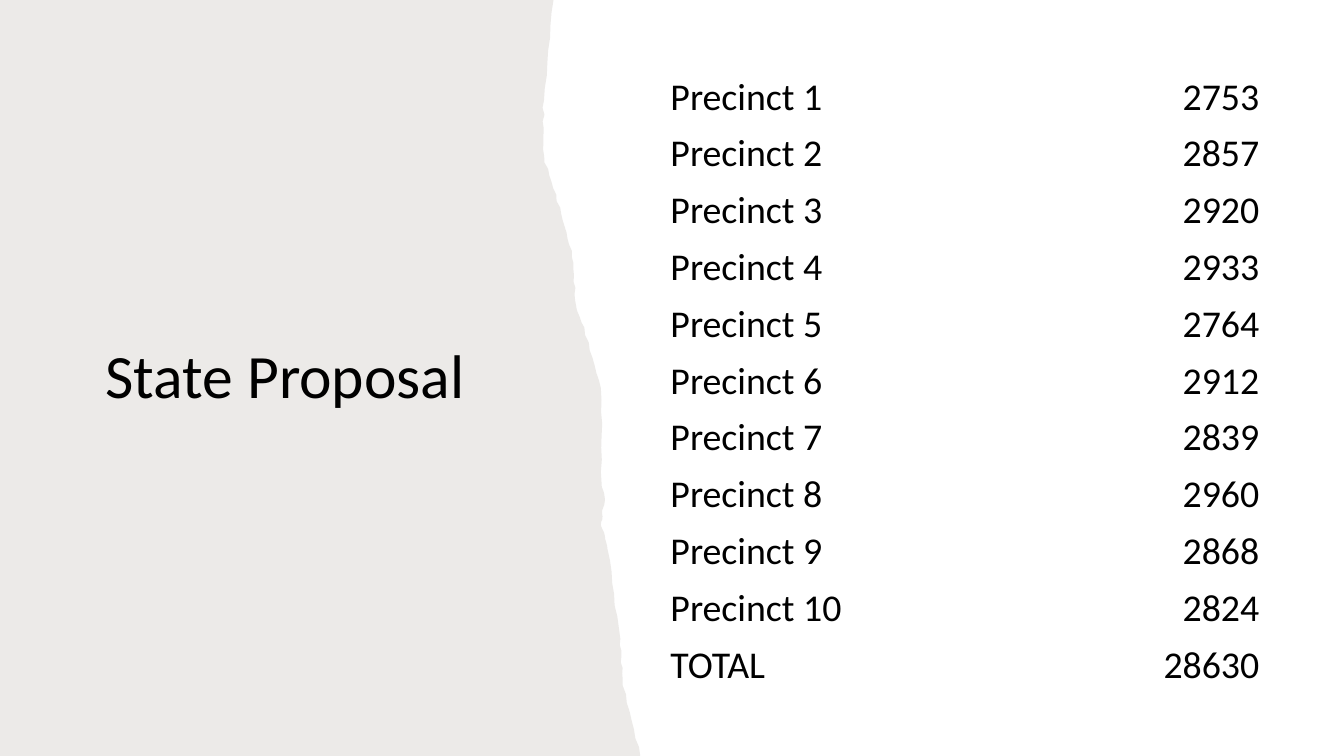
from math import sin

from lxml import etree
from pptx import Presentation
from pptx import util as u
from pptx.dml.color import RGBColor
from pptx.enum import text
from pptx.oxml.ns import qn

BLACK = RGBColor(0x00, 0x00, 0x00)
WHITE = RGBColor(0xFF, 0xFF, 0xFF)
TAUPE = RGBColor(0x82, 0x76, 0x6A)

SLIDE_WIDTH, SLIDE_HEIGHT = 13.33, 7.5
VOTES = [2753, 2857, 2920, 2933, 2764, 2912, 2839, 2960, 2868, 2824]

# Where the tear changes direction: height down the slide -> distance from the left
TEAR_BENDS = {
    0: 5.49, 1.0: 5.39, 1.55: 5.39, 2.06: 5.55, 2.55: 5.68, 3.04: 5.71,
    3.25: 5.79, 3.85: 5.96, 4.8: 5.97, 4.95: 6.0, 5.18: 5.96, 5.45: 6.03,
    6.34: 6.15, 6.8: 6.18, SLIDE_HEIGHT: 6.35,
}
TEAR_STEPS = 8  # short strokes between two bends
TEAR_ROUGHNESS = 0.01


def torn_edge(bends):
    """Join the bends with short strokes, each nudged sideways like torn paper."""
    corners = list(bends.items())
    edge = []
    for (top, x_top), (bottom, x_bottom) in zip(corners, corners[1:]):
        for step in range(TEAR_STEPS):
            share = step / TEAR_STEPS
            y = top + (bottom - top) * share
            nudge = TEAR_ROUGHNESS * sin(40 * y) * sin(7 * y)
            edge.append((x_top + (x_bottom - x_top) * share + nudge, y))
    last_y, last_x = corners[-1]
    return edge + [(last_x, last_y)]


class SlideBuilder:
    font = "Calibri"
    title_size = 44
    table_size = 27
    cell_margin = u.Inches(0.03)
    border_width = u.Pt(1)

    def __init__(self, slide):
        self.s = slide

    def style(self, p, size, align):
        p.alignment = align
        for r in p.runs:
            r.font.name = self.font
            r.font.size = u.Pt(size)
            r.font.color.rgb = BLACK

    def panel(self, edge, color, opacity):
        """Fill the area from the slide's left side to the edge; opacity in percent."""
        points = [(u.Inches(x), u.Inches(y)) for x, y in edge]
        bottom_left = (0, points[-1][1])
        fb = self.s.shapes.build_freeform(0, 0)
        fb.add_line_segments(points + [bottom_left], close=True)
        sp = fb.convert_to_shape()
        sp.shadow.inherit = False
        sp.line.fill.background()
        sp.fill.solid()
        sp.fill.fore_color.rgb = color
        rgb = sp._element.spPr.find(f".//{qn('a:srgbClr')}")
        etree.SubElement(rgb, qn("a:alpha"), val=str(opacity * 1000))
        # Keep the panel behind the title placeholder
        self.s.shapes._spTree.insert(2, sp._element)

    def title(self, words, left, top, width, height):
        sp = self.s.shapes.title
        sp.left, sp.top = u.Inches(left), u.Inches(top)
        sp.width, sp.height = u.Inches(width), u.Inches(height)
        tf = sp.text_frame
        tf.text = words
        tf.word_wrap = True
        tf.auto_size = text.MSO_AUTO_SIZE.NONE
        tf.vertical_anchor = text.MSO_ANCHOR.BOTTOM
        p = tf.paragraphs[0]
        p.line_spacing = 0.9
        p.space_after = u.Pt(6)
        self.style(p, self.title_size, text.PP_ALIGN.CENTER)

    def borders(self, cell, color):
        tcPr = cell._tc.get_or_add_tcPr()
        for i, side in enumerate(("lnL", "lnR", "lnT", "lnB")):
            ln = etree.Element(qn(f"a:{side}"), w=str(self.border_width))
            fill = etree.SubElement(ln, qn("a:solidFill"))
            etree.SubElement(fill, qn("a:srgbClr"), val=str(color))
            tcPr.insert(i, ln)

    def cell(self, cell, value, align):
        cell.text = str(value)
        cell.vertical_anchor = text.MSO_ANCHOR.BOTTOM
        cell.margin_left = cell.margin_right = cell.margin_top = self.cell_margin
        cell.margin_bottom = 0
        cell.fill.solid()
        cell.fill.fore_color.rgb = WHITE
        self.borders(cell, WHITE)
        self.style(cell.text_frame.paragraphs[0], self.table_size, align)

    def table(self, rows, left, top, widths, height):
        """Place a table of label and number columns, with rows of equal height."""
        frame = self.s.shapes.add_table(
            len(rows), len(widths), u.Inches(left), u.Inches(top),
            u.Inches(sum(widths)), u.Inches(height))
        table = frame.table
        table.first_row = table.horz_banding = False
        for column, width in zip(table.columns, widths):
            column.width = u.Inches(width)
        aligns = (text.PP_ALIGN.LEFT, text.PP_ALIGN.RIGHT)
        for i, row in enumerate(rows):
            for j, (value, align) in enumerate(zip(row, aligns)):
                self.cell(table.cell(i, j), value, align)


def main():
    prs = Presentation()
    prs.slide_width, prs.slide_height = u.Inches(SLIDE_WIDTH), u.Inches(SLIDE_HEIGHT)
    title_only = prs.slide_layouts[5]
    b = SlideBuilder(prs.slides.add_slide(title_only))
    b.panel(torn_edge(TEAR_BENDS), TAUPE, opacity=15)
    b.title("State Proposal", left=0.85, top=1.08, width=3.96, height=3.06)
    rows = [(f"Precinct {n}", votes) for n, votes in enumerate(VOTES, 1)]
    rows.append(("TOTAL", sum(VOTES)))
    b.table(rows, left=6.62, top=0.63, widths=(3.27, 2.63), height=6.2)
    prs.save("out.pptx")


if __name__ == "__main__":
    main()
